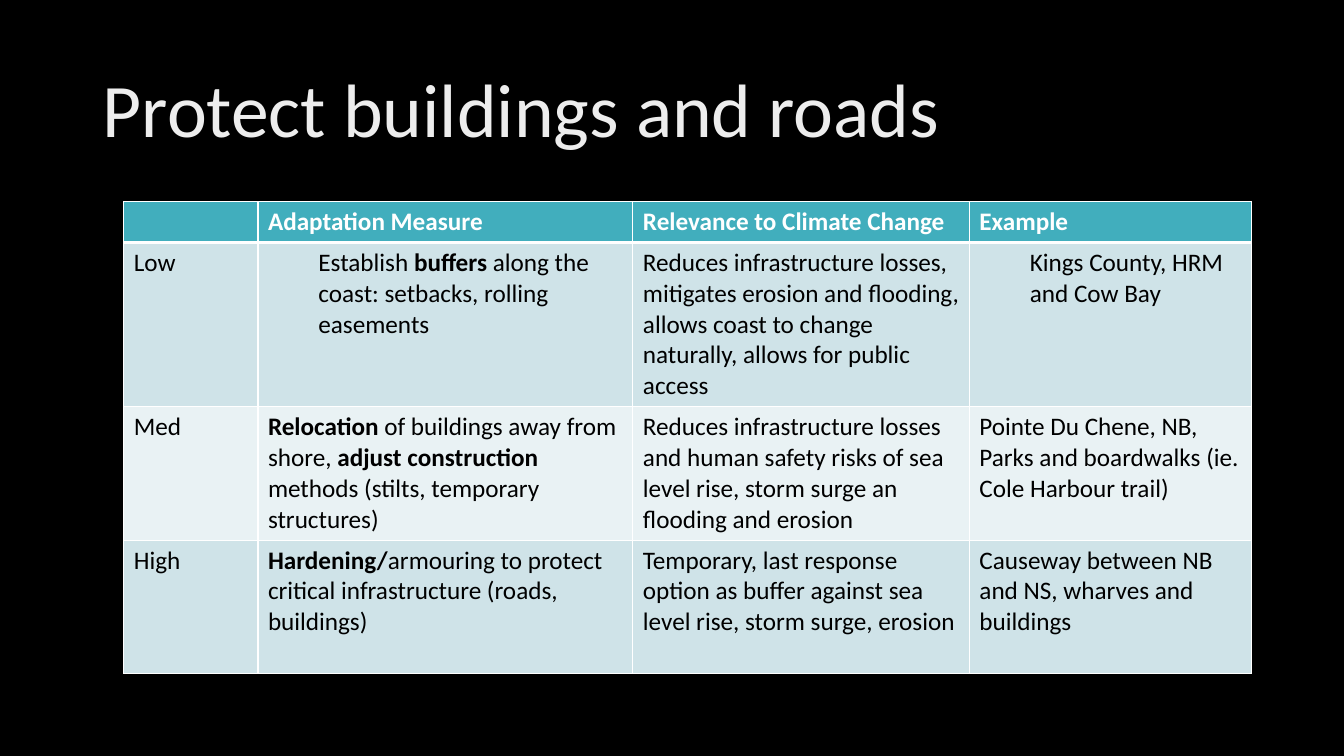
from lxml.etree import SubElement
from pptx import Presentation
from pptx.dml.color import RGBColor
from pptx.enum.text import MSO_ANCHOR, PP_ALIGN
from pptx.oxml.ns import qn
from pptx.util import Cm, Pt

BLACK = RGBColor(0x00, 0x00, 0x00)
WHITE = RGBColor(0xFF, 0xFF, 0xFF)
TITLE_GREY = RGBColor(0xED, 0xED, 0xED)
HEADER_TEAL = RGBColor(0x41, 0xAE, 0xBD)
BAND_DARK = RGBColor(0xCF, 0xE3, 0xE8)
BAND_LIGHT = RGBColor(0xE9, 0xF2, 0xF4)

COLUMN_WIDTHS = (3.38, 9.45, 8.48, 7.11)
ROW_HEIGHTS = (1.03, 4.14, 3.36, 3.36)
INDENTED_CELLS = {(1, 1), (1, 3)}
MEASURES = (
    ("", "Adaptation Measure", "Relevance to Climate Change", "Example"),
    ("Low",
     "Establish **buffers **along the coast: setbacks, rolling easements",
     "Reduces infrastructure losses, mitigates erosion and flooding, "
     "allows coast to change naturally, allows for public access",
     "Kings County, HRM and Cow Bay"),
    ("Med",
     "**Relocation **of buildings away from shore, **adjust construction **"
     "methods (stilts, temporary structures)",
     "Reduces infrastructure losses and human safety risks of sea level rise, "
     "storm surge an flooding and erosion",
     "Pointe Du Chene, NB, Parks and boardwalks (ie. Cole Harbour trail)"),
    ("High",
     "**Hardening/**armouring to protect critical infrastructure (roads, buildings)",
     "Temporary, last response option as buffer against sea level rise, "
     "storm surge, erosion",
     "Causeway between NB and NS, wharves and buildings"),
)


def write_text(text_frame, text, *, size, color, bold=False, indent=0, line_spacing=1.0):
    """Write one paragraph; parts between double asterisks are bold."""
    paragraph = text_frame.paragraphs[0]
    paragraph.alignment = PP_ALIGN.LEFT
    paragraph.line_spacing = line_spacing
    if indent:
        properties = paragraph._p.get_or_add_pPr()
        properties.set("marL", str(Cm(indent)))
        properties.set("indent", "0")
    paragraph.font.size = Pt(size)
    for index, part in enumerate(text.split("**")):
        if part:
            run = paragraph.add_run()
            run.text = part
            run.font.name = "Calibri"
            run.font.size = Pt(size)
            run.font.bold = bold or index % 2 == 1
            run.font.color.rgb = color


def set_borders(cell, color, bottom_width):
    properties = cell._tc.get_or_add_tcPr()
    widths = {"a:lnL": 1, "a:lnR": 1, "a:lnT": 1, "a:lnB": bottom_width}
    for tag, width in widths.items():
        line = SubElement(properties, qn(tag), w=str(Pt(width)))
        fill = SubElement(line, qn("a:solidFill"))
        SubElement(fill, qn("a:srgbClr"), val=str(color))


def add_title(slide, text):
    title = slide.shapes.title
    title.left, title.top = Cm(2.34), Cm(1.02)
    title.width, title.height = Cm(29.21), Cm(3.68)
    title.text_frame.vertical_anchor = MSO_ANCHOR.MIDDLE
    write_text(title.text_frame, text, size=54, color=TITLE_GREY, line_spacing=0.9)


def add_measures_table(slide):
    frame = slide.shapes.add_table(
        len(MEASURES), len(COLUMN_WIDTHS), Cm(3.12), Cm(5.08),
        Cm(sum(COLUMN_WIDTHS)), Cm(sum(ROW_HEIGHTS)))
    table = frame.table
    for column, width in zip(table.columns, COLUMN_WIDTHS):
        column.width = Cm(width)
    for row, height in zip(table.rows, ROW_HEIGHTS):
        row.height = Cm(height)

    for row_index, texts in enumerate(MEASURES):
        is_header = row_index == 0
        band = BAND_DARK if row_index % 2 else BAND_LIGHT
        # The header rule is thick, and the row below shares that edge.
        for column_index, text in enumerate(texts):
            cell = table.cell(row_index, column_index)
            set_borders(cell, WHITE, bottom_width=3 if is_header else 1)
            cell.fill.solid()
            cell.fill.fore_color.rgb = HEADER_TEAL if is_header else band
            write_text(
                cell.text_frame, text, size=18, bold=is_header,
                color=WHITE if is_header else BLACK,
                indent=1.27 if (row_index, column_index) in INDENTED_CELLS else 0)


def main():
    presentation = Presentation()
    presentation.slide_width, presentation.slide_height = Cm(33.87), Cm(19.05)
    slide = presentation.slides.add_slide(presentation.slide_layouts[5])
    slide.background.fill.solid()
    slide.background.fill.fore_color.rgb = BLACK
    add_title(slide, "Protect buildings and roads")
    add_measures_table(slide)
    presentation.save("out.pptx")


if __name__ == "__main__":
    main()
